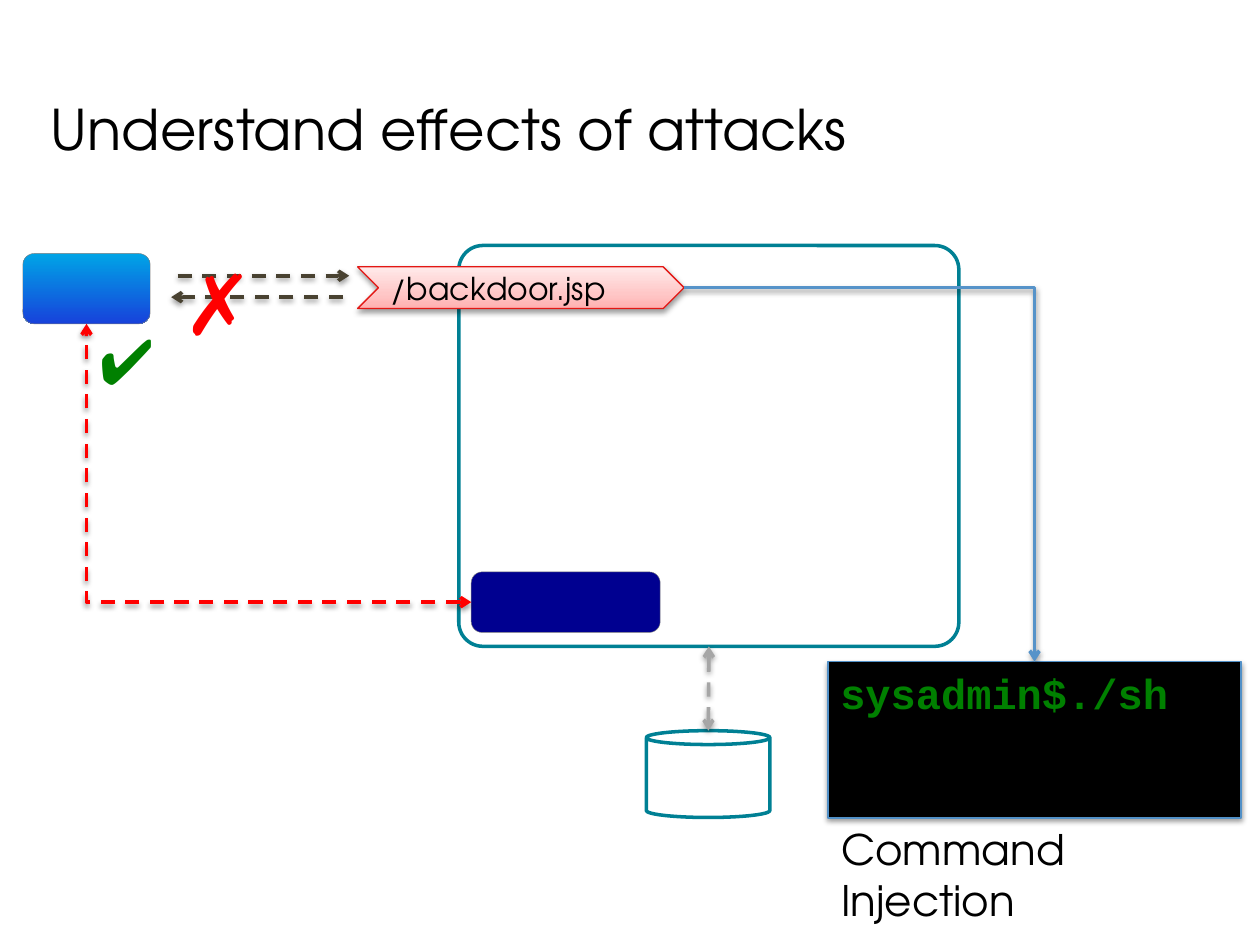
"""Build the slide that shows a backdoor leading to command injection."""
import copy
import dataclasses

import lxml.etree
import pptx
import pptx.dml.color
import pptx.enum.dml
import pptx.enum.shapes
import pptx.enum.text
import pptx.oxml.ns
import pptx.util

Cm = pptx.util.Cm
Pt = pptx.util.Pt
RGB = pptx.dml.color.RGBColor.from_string
SHAPE = pptx.enum.shapes.MSO_SHAPE
CONNECTOR = pptx.enum.shapes.MSO_CONNECTOR
ANCHOR = pptx.enum.text.MSO_ANCHOR
qn = pptx.oxml.ns.qn


@dataclasses.dataclass(frozen=True)
class Theme:
    font: str = "TeX Gyre Adventor"
    symbol_font: str = "Arial"
    code_font: str = "Courier New"
    title_size: int = 32
    body_size: int = 24
    label_size: int = 18
    cross_size: int = 48
    check_size: int = 36
    black: str = "000000"
    teal: str = "008094"
    edge: str = "808080"
    navy: str = "000090"
    red: str = "FF0000"
    green: str = "008000"
    brown: str = "494231"
    grey: str = "A6A6A6"
    blue: str = "5693C9"
    terminal_edge: str = "5190C7"
    backdoor_edge: str = "E31714"
    browser_stops: tuple = ((0, "00A4E6"), (1, "1742DB"))
    backdoor_stops: tuple = ((0, "FFB0B0"), (0.35, "FFC7C7"), (1, "FFEAEA"))


theme = Theme()


def stroke(item, color, width, shadow=True, dashed=False, ends=()):
    """Set the line, arrowheads and shadow of a shape or connector."""
    item.line.color.rgb = RGB(color)
    item.line.width = Pt(width)
    if dashed:
        item.line.dash_style = pptx.enum.dml.MSO_LINE.DASH
    properties = item.element.spPr
    for end in ends:
        lxml.etree.SubElement(properties.find(qn("a:ln")), qn(f"a:{end}"), type="arrow")
    effects = lxml.etree.SubElement(properties, qn("a:effectLst"))
    if shadow:
        outer = lxml.etree.SubElement(
            effects, qn("a:outerShdw"), blurRad=str(Pt(3.1)), dist=str(Pt(1.6)),
            dir="5400000", rotWithShape="0")
        tint = lxml.etree.SubElement(outer, qn("a:srgbClr"), val=theme.black)
        lxml.etree.SubElement(tint, qn("a:alpha"), val="38000")


def write(box, text, size, color=theme.black, font=theme.font, wrap=True,
          anchor=ANCHOR.TOP, bold=False):
    """Put one left-aligned, formatted line of text in a box."""
    frame = box.text_frame
    frame.text = text
    frame.word_wrap = wrap
    frame.vertical_anchor = anchor
    para = frame.paragraphs[0]
    para.alignment = pptx.enum.text.PP_ALIGN.LEFT
    span = para.runs[0].font
    span.name, span.size, span.bold = font, Pt(size), bold
    span.color.rgb = RGB(color)


deck = pptx.Presentation()
deck.slide_width, deck.slide_height = Cm(25.4), Cm(19.05)
page = deck.slides.add_slide(deck.slide_layouts[6])

shapes = {}
for name, kind, place, adjust, fill, edge, width, shadow in (
    ("browser", SHAPE.ROUNDED_RECTANGLE, (0.46, 5.11, 2.57, 1.42), None,
     None, theme.edge, 0.25, False),
    ("server", SHAPE.ROUNDED_RECTANGLE, (9.25, 4.95, 10.08, 8.08), 0.06,
     None, theme.teal, 2, False),
    ("database", SHAPE.CAN, (13.03, 14.73, 2.49, 1.75), 0.16,
     None, theme.teal, 2, False),
    ("backdoor", SHAPE.CHEVRON, (7.21, 5.38, 6.58, 0.84), None,
     None, theme.backdoor_edge, 0.75, True),
    ("process", SHAPE.ROUNDED_RECTANGLE, (9.5, 11.53, 3.81, 1.22), 0.18,
     theme.navy, theme.edge, 0.25, False),
    ("terminal", SHAPE.RECTANGLE, (16.69, 13.34, 8.33, 3.15), None,
     theme.black, theme.terminal_edge, 0.75, True),
):
    shape = page.shapes.add_shape(kind, *map(Cm, place))
    if adjust:
        shape.adjustments[0] = adjust
    if fill:
        shape.fill.solid()
        shape.fill.fore_color.rgb = RGB(fill)
    else:
        shape.fill.background()
    stroke(shape, edge, width, shadow)
    shapes[name] = shape

for name, stops, angle in (("browser", theme.browser_stops, 270),
                           ("backdoor", theme.backdoor_stops, 90)):
    fill = shapes[name].fill
    fill.gradient()
    fill.gradient_angle = angle
    stop_list = shapes[name].element.spPr.find(qn("a:gradFill")).find(qn("a:gsLst"))
    while len(stop_list) < len(stops):
        stop_list.append(copy.deepcopy(stop_list[-1]))
    for stop, (position, color) in zip(fill.gradient_stops, stops):
        stop.position = position
        stop.color.rgb = RGB(color)

both, forward = ("headEnd", "tailEnd"), ("tailEnd",)
for kind, route, color, dashed, ends, start, finish in (
    (CONNECTOR.STRAIGHT, (14.28, 13.03, 14.28, 14.73), theme.grey, True, both,
     ("server", 2), None),
    (CONNECTOR.STRAIGHT, (3.58, 5.56, 7.04, 5.56), theme.brown, True, forward, None, None),
    (CONNECTOR.STRAIGHT, (6.91, 5.99, 3.45, 5.99), theme.brown, True, forward, None, None),
    (CONNECTOR.ELBOW, (9.5, 12.14, 1.75, 6.53), theme.red, True, both,
     ("process", 1), ("browser", 2)),
    (CONNECTOR.ELBOW, (13.79, 5.8, 20.85, 13.34), theme.blue, False, forward,
     ("backdoor", 3), ("terminal", 0)),
):
    link = page.shapes.add_connector(kind, *map(Cm, route))
    if kind == CONNECTOR.ELBOW:
        link.element.spPr.find(qn("a:prstGeom")).set("prst", "bentConnector2")
    if start:
        link.begin_connect(shapes[start[0]], start[1])
    if finish:
        link.end_connect(shapes[finish[0]], finish[1])
    stroke(link, color, 2, dashed=dashed, ends=ends)

write(shapes["backdoor"], "/backdoor.jsp", theme.label_size, anchor=ANCHOR.MIDDLE)
write(shapes["terminal"], "sysadmin$./sh", theme.body_size, theme.green,
      theme.code_font, bold=True)

for text, place, size, color, font, wrap, anchor in (
    ("Understand effects of attacks", (0.76, 1.19, 23.75, 2.79), theme.title_size,
     theme.black, theme.font, True, ANCHOR.MIDDLE),
    ("✗", (3.45, 4.95, 1.5, 2.31), theme.cross_size,
     theme.red, theme.symbol_font, False, ANCHOR.TOP),
    ("Command Injection", (16.71, 16.48, 8.41, 1.27), theme.body_size,
     theme.black, theme.font, True, ANCHOR.TOP),
    ("✔", (1.75, 6.35, 1.6, 1.8), theme.check_size,
     theme.green, theme.symbol_font, False, ANCHOR.TOP),
):
    box = page.shapes.add_textbox(*map(Cm, place))
    write(box, text, size, color, font, wrap, anchor)

deck.save("out.pptx")
